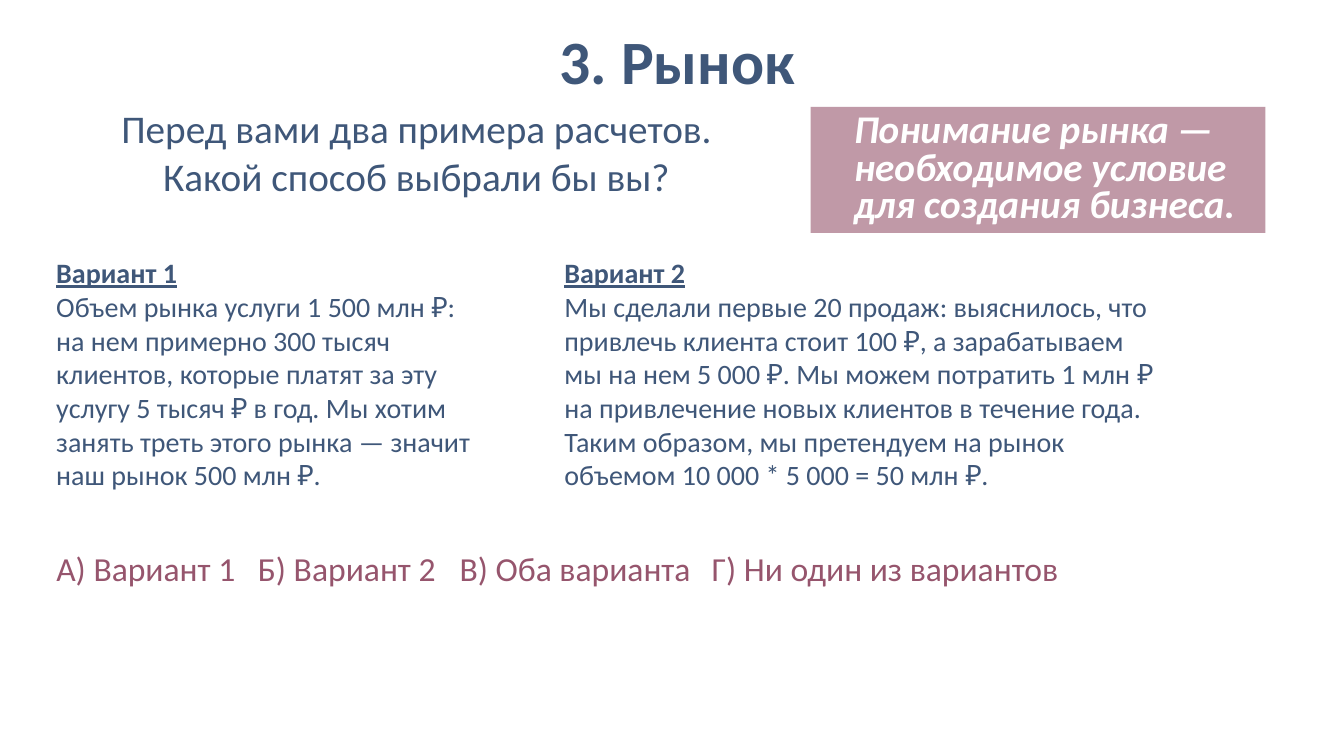
from dataclasses import dataclass

from lxml.etree import SubElement
from pptx import Presentation
from pptx.dml.color import RGBColor
from pptx.enum.text import MSO_ANCHOR, MSO_AUTO_SIZE, PP_ALIGN
from pptx.oxml.ns import qn
from pptx.util import Inches, Pt


@dataclass(frozen=True)
class Theme:
    font: str = "Calibri"
    navy: RGBColor = RGBColor(0x3F, 0x57, 0x79)
    plum: RGBColor = RGBColor(0x96, 0x55, 0x6D)
    white: RGBColor = RGBColor(0xFF, 0xFF, 0xFF)
    title_size: int = 44
    lead_size: int = 28
    answer_size: int = 24
    text_size: int = 20


theme = Theme()


def write_text(shape, box, lines, size, color, align=PP_ALIGN.LEFT, spacing=1.0,
               bold=False, italic=False, heading=False, tabs=()):
    """Place the shape and fill it; heading makes the first line bold and underlined."""
    shape.left, shape.top, shape.width, shape.height = map(Inches, box)
    frame = shape.text_frame
    frame.word_wrap = True
    frame.auto_size = MSO_AUTO_SIZE.NONE
    for index, line in enumerate(lines):
        paragraph = frame.paragraphs[0] if index == 0 else frame.add_paragraph()
        paragraph.alignment = align
        paragraph.line_spacing = spacing
        paragraph.space_before = Pt(0)
        properties = paragraph._p.get_or_add_pPr()
        properties.set("marL", "0")
        properties.set("indent", "0")
        SubElement(properties, qn("a:buNone"))
        if tabs:
            tab_list = SubElement(properties, qn("a:tabLst"))
            for position in tabs:
                SubElement(tab_list, qn("a:tab"), pos=str(Inches(position)), algn="l")
        run = paragraph.add_run()
        run.text = line
        run.font.name = theme.font
        run.font.size = Pt(size)
        run.font.color.rgb = color
        run.font.bold = bold or (heading and index == 0)
        run.font.italic = italic
        run.font.underline = heading and index == 0


def fill_placeholder(shape, color, opacity, insets):
    shape.fill.solid()
    shape.fill.fore_color.rgb = color
    color_element = shape.element.spPr.find(qn("a:solidFill")).find(qn("a:srgbClr"))
    SubElement(color_element, qn("a:alpha"), val=str(opacity * 1000))
    frame = shape.text_frame
    frame.vertical_anchor = MSO_ANCHOR.MIDDLE
    (frame.margin_left, frame.margin_top,
     frame.margin_right, frame.margin_bottom) = map(Inches, insets)


presentation = Presentation()
presentation.slide_width = Inches(13.33)
presentation.slide_height = Inches(7.5)
slide = presentation.slides.add_slide(presentation.slide_layouts[1])

# Title and key message
title = slide.shapes.title
write_text(title, (0.46, 0.31, 12.09, 0.68), ["3. Рынок"], theme.title_size, theme.navy,
           align=PP_ALIGN.CENTER, spacing=0.85, bold=True)
fill_placeholder(title, theme.white, 50, (0.43, 0, 0, 0))

message = slide.placeholders[1]
write_text(message, (8.04, 1.06, 4.51, 1.25),
           ["Понимание рынка — необходимое условие для создания бизнеса."],
           theme.lead_size, theme.white, spacing=0.8, bold=True, italic=True)
fill_placeholder(message, theme.plum, 60, (0.43, 0.05, 0.1, 0.05))

# Question
question = slide.shapes.add_textbox(0, 0, 0, 0)
write_text(question, (0.57, 0.99, 7.12, 1.04),
           ["Перед вами два примера расчетов. Какой способ выбрали бы вы?"],
           theme.lead_size, theme.navy, align=PP_ALIGN.CENTER)

# Two calculations side by side
variants = [
    (0.46, 4.36, "Вариант 1",
     "Объем рынка услуги 1 500 млн ₽: на нем примерно 300 тысяч клиентов, которые платят "
     "за эту услугу 5 тысяч ₽ в год. Мы хотим занять треть этого рынка — значит "
     "наш рынок 500 млн ₽."),
    (5.5, 6.13, "Вариант 2",
     "Мы сделали первые 20 продаж: выяснилось, что привлечь клиента стоит 100 ₽, "
     "а зарабатываем мы на нем 5 000 ₽. Мы можем потратить 1 млн ₽ на привлечение новых "
     "клиентов в течение года. Таким образом, мы претендуем на рынок объемом "
     "10 000 * 5 000 = 50 млн ₽."),
]
for left, width, heading, calculation in variants:
    variant = slide.shapes.add_textbox(0, 0, 0, 0)
    write_text(variant, (left, 2.49, width, 2.46), [heading, calculation],
               theme.text_size, theme.navy, heading=True)

# Answers, aligned by tab stops
answers = ["А) Вариант 1", "Б) Вариант 2", "В) Оба варианта", "Г) Ни один из вариантов"]
answer_row = slide.shapes.add_textbox(0, 0, 0, 0)
write_text(answer_row, (0.46, 5.39, 12.32, 0.5), ["\t".join(answers)],
           theme.answer_size, theme.plum, tabs=(2.45, 4.97, 8.01))

presentation.save("out.pptx")
